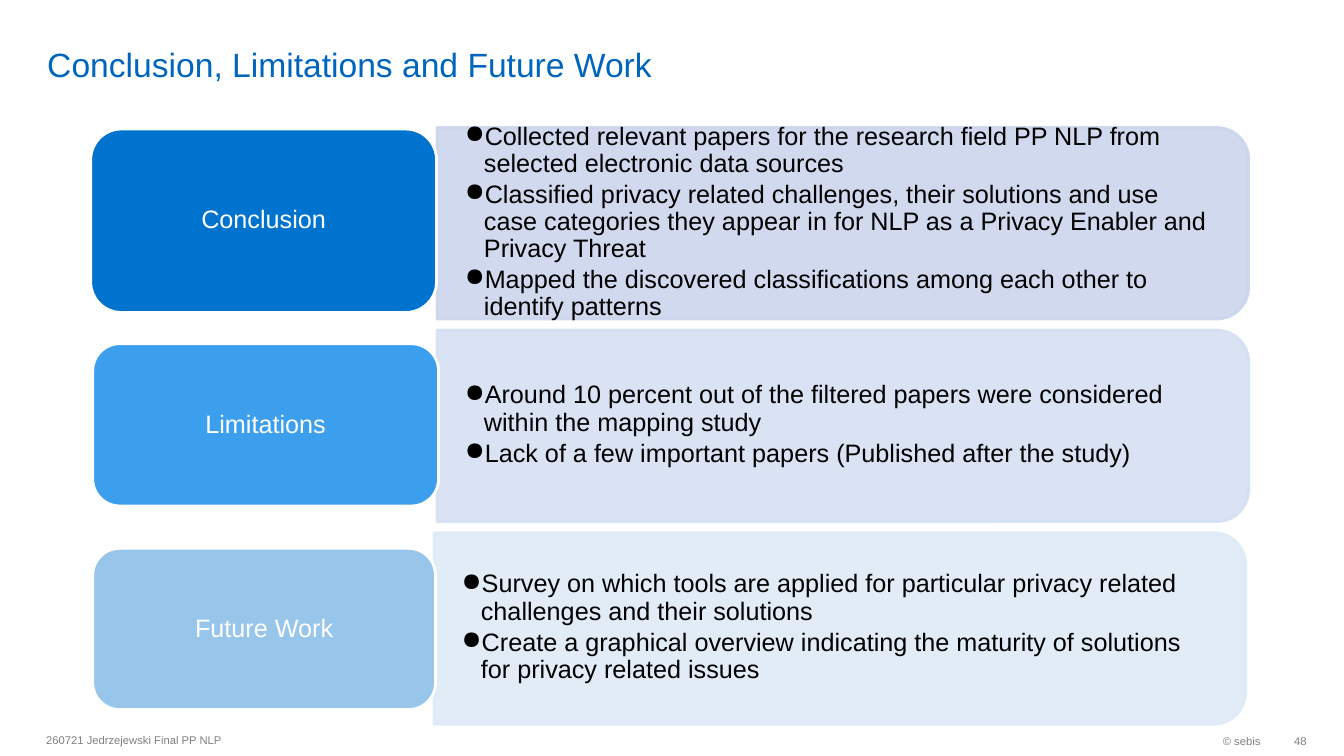
from dataclasses import dataclass

import lxml.etree
import pptx
import pptx.dml.color
import pptx.enum.shapes
import pptx.enum.text
import pptx.oxml.ns
import pptx.util

SCALE = 9144  # EMU per px, 100 px to the inch
SHAPE = pptx.enum.shapes.MSO_SHAPE
ALIGN = pptx.enum.text.PP_ALIGN
ANCHOR = pptx.enum.text.MSO_ANCHOR
qn = pptx.oxml.ns.qn


@dataclass(frozen=True)
class Theme:
    font: str = "Arial"
    title: str = "0065BD"
    text: str = "000000"
    light: str = "FFFFFF"
    foot: str = "808080"
    page: str = "7F7F7F"
    head_size: int = 24
    body_size: int = 18
    foot_size: int = 8


@dataclass(frozen=True)
class Box:
    left: int
    top: int
    width: int
    height: int

    def emu(self) -> list[int]:
        return [px(n) for n in (self.left, self.top, self.width, self.height)]


@dataclass(frozen=True)
class Line:
    text: str
    box: Box
    size: int
    color: str
    align: ALIGN = ALIGN.LEFT
    anchor: ANCHOR = ANCHOR.MIDDLE
    pads: tuple[int, int, int, int] = (10, 5, 10, 5)


@dataclass(frozen=True)
class Row:
    name: str
    label: Box
    left: int
    fill: str
    tint: str
    points: tuple[str, ...]


THEME = Theme()
TOP, PITCH = 126, 201
WIDE, HIGH = 805, 190

LINES = (
    Line("Conclusion, Limitations and Future Work", Box(37, 5, 1158, 79),
         THEME.head_size, THEME.title, anchor=ANCHOR.BOTTOM, pads=(10, 0, 10, 0)),
    Line("© sebis", Box(1026, 719, 234, 32), THEME.foot_size, THEME.foot, ALIGN.RIGHT),
    Line("48", Box(1260, 719, 36, 32), THEME.foot_size, THEME.page, ALIGN.RIGHT,
         pads=(10, 5, 0, 5)),
    Line("260721 Jedrzejewski Final PP NLP", Box(36, 718, 630, 32),
         THEME.foot_size, THEME.foot),
)

ROWS = (
    Row("Conclusion", Box(90, 128, 343, 182), 434, "0073CF", "CCD5ED", (
        "Collected relevant papers for the research field PP NLP from selected "
        "electronic data sources",
        "Classified privacy related challenges, their solutions and use case categories "
        "they appear in for NLP as a Privacy Enabler and Privacy Threat",
        "Mapped the discovered classifications among each other to identify patterns",
    )),
    Row("Limitations", Box(92, 341, 343, 161), 434, "3C9FED", "D5E0F3", (
        "Around 10 percent out of the filtered papers were considered within the "
        "mapping study",
        "Lack of a few important papers (Published after the study)",
    )),
    Row("Future Work", Box(92, 544, 340, 160), 431, "98C6EA", "DEEAF7", (
        "Survey on which tools are applied for particular privacy related challenges "
        "and their solutions",
        "Create a graphical overview indicating the maturity of solutions for privacy "
        "related issues",
    )),
)


def px(count: int) -> int:
    return pptx.util.Emu(count * SCALE)


def rgb(code: str) -> pptx.dml.color.RGBColor:
    return pptx.dml.color.RGBColor.from_string(code)


def set_font(para, size: int, color: str) -> None:
    para.font.name = THEME.font
    para.font.size = pptx.util.Pt(size)
    para.font.color.rgb = rgb(color)


def set_frame(frame, anchor: ANCHOR, pads: tuple[int, int, int, int]) -> None:
    frame.word_wrap = True
    frame.vertical_anchor = anchor
    frame.margin_left, frame.margin_top, frame.margin_right, frame.margin_bottom = map(px, pads)


def add_bullet(para) -> None:
    props = para._p.get_or_add_pPr()
    props.set("marL", str(px(19)))
    props.set("indent", str(px(-19)))
    tone = lxml.etree.SubElement(props, qn("a:buClr"))
    lxml.etree.SubElement(tone, qn("a:srgbClr"), val=THEME.text)
    lxml.etree.SubElement(props, qn("a:buChar"), char="●")


def add_line(slide, line: Line) -> None:
    frame = slide.shapes.add_textbox(*line.box.emu()).text_frame
    set_frame(frame, line.anchor, line.pads)
    para = frame.paragraphs[0]
    para.text = line.text
    para.alignment = line.align
    set_font(para, line.size, line.color)


def add_shape(slide, kind: SHAPE, box: Box, fill: str, edge: str):
    shape = slide.shapes.add_shape(kind, *box.emu())
    shape.shadow.inherit = False
    shape.fill.solid()
    shape.fill.fore_color.rgb = rgb(fill)
    shape.line.color.rgb = rgb(edge)
    shape.line.width = pptx.util.Pt(2)
    return shape


def add_panel(slide, row: Row, top: int) -> None:
    """Draw the tinted panel, an upright shape turned on its side, and its points."""
    shift = (WIDE - HIGH) // 2
    upright = Box(row.left + shift, top - shift, HIGH, WIDE)
    panel = add_shape(slide, SHAPE.ROUND_2_SAME_RECTANGLE, upright, row.tint, row.tint)
    panel.rotation = 90
    for tone in panel._element.spPr.iter(qn("a:srgbClr")):
        lxml.etree.SubElement(tone, qn("a:alpha"), val="90000")

    area = Box(row.left, top + 9, WIDE - 9, HIGH - 19)
    frame = slide.shapes.add_textbox(*area.emu()).text_frame
    set_frame(frame, ANCHOR.MIDDLE, (27, 14, 27, 14))
    for spot, point in enumerate(row.points):
        para = frame.add_paragraph() if spot else frame.paragraphs[0]
        para.text = point
        para.level = 1
        add_bullet(para)
        para.line_spacing = 0.9
        para.space_after = pptx.util.Pt(2.7)
        set_font(para, THEME.body_size, THEME.text)


def add_label(slide, row: Row) -> None:
    label = add_shape(slide, SHAPE.ROUNDED_RECTANGLE, row.label, row.fill, THEME.light)
    set_frame(label.text_frame, ANCHOR.MIDDLE, (7, 4, 7, 4))
    para = label.text_frame.paragraphs[0]
    para.text = row.name
    para.alignment = ALIGN.CENTER
    para.line_spacing = 0.9
    set_font(para, THEME.body_size, THEME.light)


def main() -> None:
    deck = pptx.Presentation()
    deck.slide_width, deck.slide_height = px(1333), px(750)
    slide = deck.slides.add_slide(deck.slide_layouts[6])
    for line in LINES:
        add_line(slide, line)
    for index, row in enumerate(ROWS):
        add_panel(slide, row, TOP + index * PITCH)
        add_label(slide, row)
    deck.save("out.pptx")


if __name__ == "__main__":
    main()
